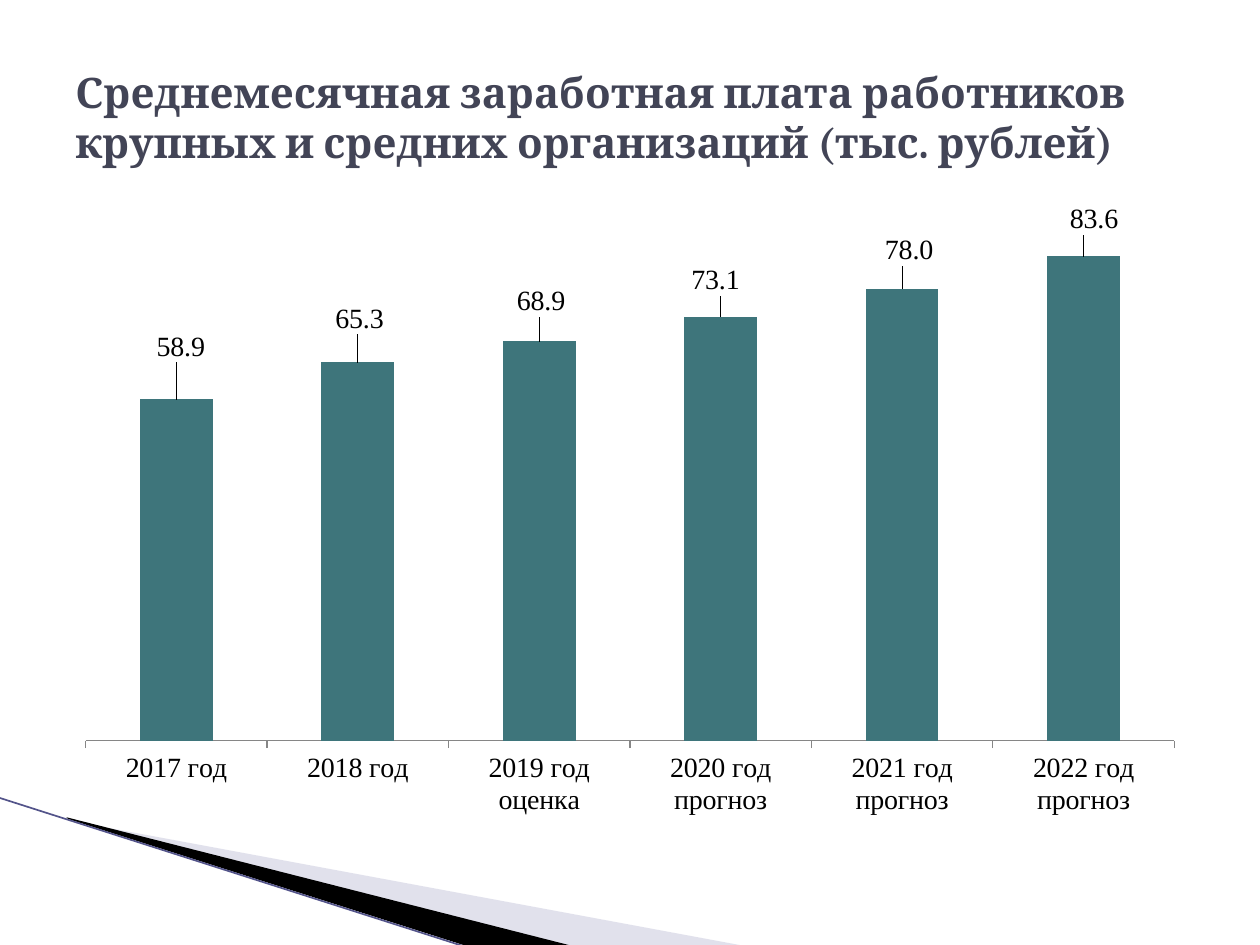
from lxml import etree
from pptx import Presentation
from pptx import util as u
from pptx.chart import data as chart_data
from pptx.dml.color import RGBColor
from pptx.enum import chart as chart_enum, shapes, text
from pptx.oxml import ns

WAGES = {
    "2017 год": 58.9,
    "2018 год": 65.3,
    "2019 год оценка": 68.9,
    "2020 год прогноз": 73.1,
    "2021 год прогноз": 78.0,
    "2022 год прогноз": 83.6,
}
LABEL_SHIFTS = [(2.5, -18), (1, -13), (1, -11), (-3, -9), (4, -10), (6, -9)]  # points
NUMBER_FORMAT = "#,##0.0"


def color(value):
    return RGBColor.from_string(value)


def add_child(parent, tag, **attributes):
    return etree.SubElement(parent, ns.qn(tag), attributes)


def manual_layout(**settings):
    """Build a c:layout element from name and value pairs."""
    layout = etree.Element(ns.qn("c:layout"))
    manual = add_child(layout, "c:manualLayout")
    for name, value in settings.items():
        add_child(manual, f"c:{name}", val=str(value))
    return layout


class SlideBuilder:
    title_font = "Cambria"
    chart_font = "Times New Roman"
    base_font = "DejaVu Sans Mono"
    title_color = "424456"
    bar_color = "3E757B"

    def __init__(self, slide):
        self.slide = slide

    def wedge(self, points, fill, alpha=None):
        builder = self.slide.shapes.build_freeform(*points[0], scale=u.Pt(1))
        builder.add_line_segments(points[1:], close=True)
        shape = builder.convert_to_shape()
        shape.shadow.inherit = False
        shape.fill.solid()
        shape.fill.fore_color.rgb = color(fill)
        shape.line.fill.background()
        if alpha is not None:
            fill_color = shape.element.spPr.find(".//" + ns.qn("a:srgbClr"))
            add_child(fill_color, "a:alpha", val=str(alpha * 1000))

    def line(self, start, end, stroke, width):
        ends = [u.Pt(value) for value in (*start, *end)]
        connector = self.slide.shapes.add_connector(shapes.MSO_CONNECTOR.STRAIGHT, *ends)
        connector.line.color.rgb = color(stroke)
        connector.line.width = u.Pt(width)
        add_child(connector.element.spPr, "a:effectLst")

    def title(self, wording, left, top, width, height):
        shape = self.slide.shapes.add_textbox(*map(u.Pt, (left, top, width, height)))
        frame = shape.text_frame
        frame.word_wrap = True
        frame.vertical_anchor = text.MSO_ANCHOR.MIDDLE
        frame.text = wording
        font = frame.paragraphs[0].runs[0].font
        font.name, font.size, font.bold = self.title_font, u.Pt(24), True
        font.color.rgb = color(self.title_color)

    def style_chart_font(self, font, name, size):
        font.name, font.size = name, u.Pt(size)
        font.color.rgb = color("000000")

    def column_chart(self, values, label_shifts, left, top, width, height):
        data = chart_data.CategoryChartData(number_format=NUMBER_FORMAT)
        data.categories = list(values)
        data.add_series("Series 1", list(values.values()))
        chart = self.slide.shapes.add_chart(
            chart_enum.XL_CHART_TYPE.COLUMN_CLUSTERED,
            *map(u.Pt, (left, top, width, height)), data).chart
        chart.has_legend = chart.has_title = False
        self.style_chart_font(chart.font, self.base_font, 18)

        value_axis = chart.value_axis
        value_axis.visible = value_axis.has_major_gridlines = False
        value_axis.minimum_scale, value_axis.maximum_scale = 0, 90
        value_axis.tick_labels.number_format = NUMBER_FORMAT
        value_axis.tick_labels.number_format_is_linked = False
        category_axis = chart.category_axis
        category_axis.major_tick_mark = chart_enum.XL_TICK_MARK.OUTSIDE
        category_axis.format.line.color.rgb = color("868686")
        self.style_chart_font(category_axis.tick_labels.font, self.chart_font, 16)

        plot = chart.plots[0]
        plot.gap_width, plot.vary_by_categories = 150, False
        series = plot.series[0]
        series.format.fill.solid()
        series.format.fill.fore_color.rgb = color(self.bar_color)
        labels = series.data_labels
        labels.show_value = True
        labels.number_format, labels.number_format_is_linked = NUMBER_FORMAT, False
        labels.position = chart_enum.XL_LABEL_POSITION.OUTSIDE_END
        self.style_chart_font(labels.font, self.chart_font, 16)
        for index in range(len(label_shifts)):
            label = series.points[index].data_label
            label.position = chart_enum.XL_LABEL_POSITION.OUTSIDE_END
            self.style_chart_font(label.font, self.chart_font, 16)
        for label, (x, y) in zip(chart.element.xpath(".//c:dLbl"), label_shifts):
            label.insert(1, manual_layout(x=x / width, y=y / height))

        plot_area = chart.element.xpath(".//c:plotArea")[0]
        for layout in plot_area.findall(ns.qn("c:layout")):
            plot_area.remove(layout)
        plot_area.insert(0, manual_layout(
            layoutTarget="inner", xMode="edge", yMode="edge",
            x=0.02, y=0.02, w=0.96, h=0.84))


def main():
    presentation = Presentation()
    presentation.slide_width, presentation.slide_height = u.Pt(720), u.Pt(540)
    builder = SlideBuilder(presentation.slides.add_slide(presentation.slide_layouts[6]))

    builder.wedge([(39.6, 468.7), (428.4, 540.7), (328.3, 540.7), (39.6, 468)], "B6B6D1", 40)
    builder.wedge([(38.2, 467.3), (329, 540.7), (267.8, 541.4), (38.9, 468)], "000000")
    builder.line((-0.7, 455.8), (267.1, 541.4), "53548A", 0.95)
    builder.column_chart(WAGES, LABEL_SHIFTS, 36, 116.6, 648, 356.4)
    builder.title("Среднемесячная заработная плата работников крупных и средних "
                  "организаций (тыс. рублей)", 36, 21.6, 648, 90)
    presentation.save("out.pptx")


if __name__ == "__main__":
    main()
